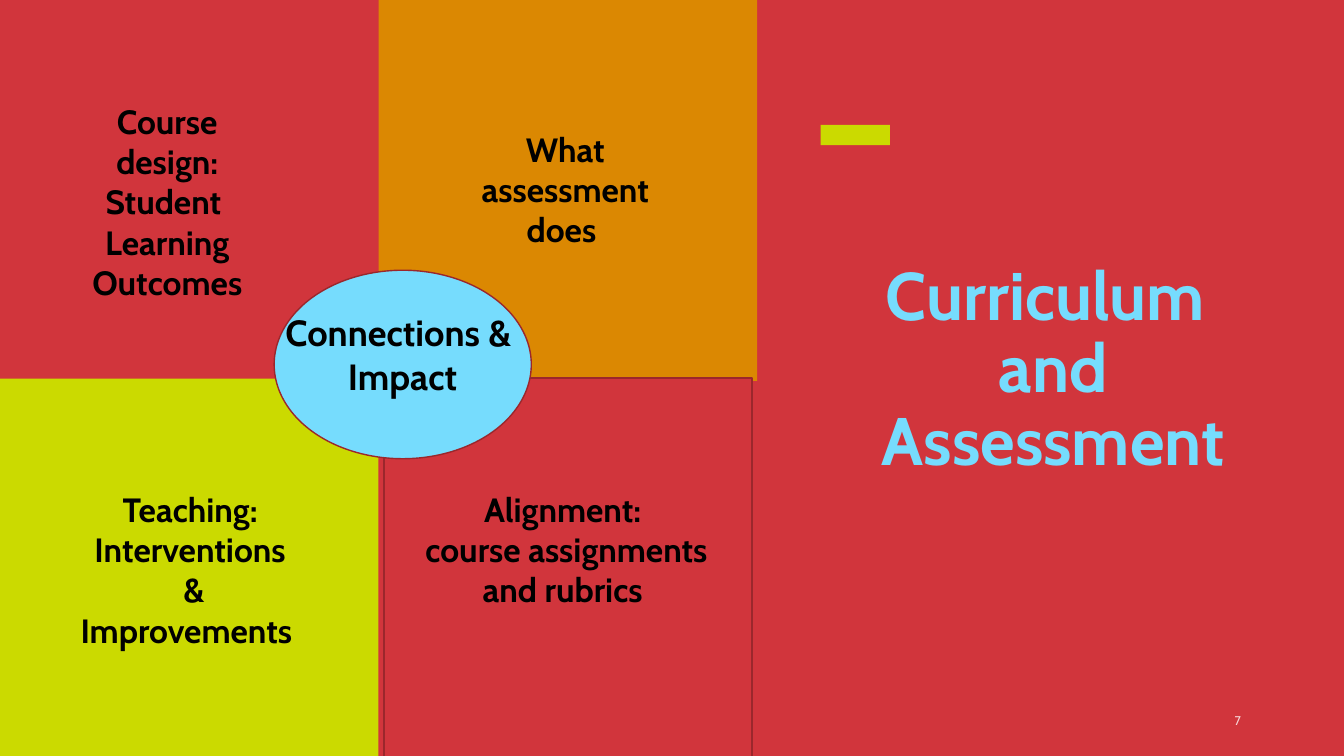
from pptx import Presentation
from pptx.dml.color import RGBColor
from pptx.enum.shapes import MSO_SHAPE as Shape
from pptx.enum.text import MSO_ANCHOR as Anchor, PP_ALIGN as Align
from pptx.util import Cm, Pt

FONT = "Cabin"
COLORS = {
    "red": "D1353C",
    "dark_red": "9B272C",
    "lime": "CBDA00",
    "orange": "DB8802",
    "sky": "76DCFD",
    "black": "000000",
    "pale": "F6D7D8",
}
SLIDE_WIDTH, SLIDE_HEIGHT = 33.87, 19.05
MATRIX_WIDTH = 19.08


def color(name):
    return RGBColor.from_string(COLORS[name])


def set_values(target, values):
    for name, value in values.items():
        setattr(target, name, value)


def place(box, offset):
    """Turn an offset (left, top, width, height) within a box into lengths."""
    left, top, width, height = offset
    return Cm(box[0] + left), Cm(box[1] + top), Cm(width), Cm(height)


def add_block(slide, box, offset, fill, line=None, kind=Shape.RECTANGLE):
    shape = slide.shapes.add_shape(kind, *place(box, offset))
    shape.shadow.inherit = False
    shape.fill.solid()
    shape.fill.fore_color.rgb = color(fill)
    if line:
        shape.line.color.rgb = color(line)
        shape.line.width = Pt(1)
    else:
        shape.line.fill.background()


def add_label(slide, box, offset, text, size=24, ink="black", bold=True,
              align=Align.CENTER, spacing=None, **frame_format):
    """Add a text box; each line of the text is a paragraph."""
    frame = slide.shapes.add_textbox(*place(box, offset)).text_frame
    set_values(frame, {"word_wrap": True, **frame_format})
    frame.text = text
    for paragraph in frame.paragraphs:
        set_values(paragraph, {"alignment": align, "line_spacing": spacing})
        for run in paragraph.runs:
            set_values(run.font, {"name": FONT, "size": Pt(size), "bold": bold})
            run.font.color.rgb = color(ink)


def add_matrix(slide, box):
    """Four quadrants with an oval over the middle."""
    half = box[2] / 2
    add_block(slide, box, (0, half, half, half), "lime")
    add_block(slide, box, (half, 0, half, 9.6), "orange")
    add_block(slide, box, (9.68, 9.53, 9.27, 9.53), "red", "dark_red")
    add_block(slide, box, (6.91, 6.81, 6.48, 4.75), "sky", "dark_red", Shape.OVAL)

    quadrant_labels = [
        ((1.55, 2.41, 5.33, 5.38), "Course design:\nStudent \nLearning Outcomes"),
        ((11.58, 3.12, 5.33, 3.33), "What assessment does "),
        ((1.55, 12.19, 6.48, 4.37), "Teaching: Interventions\n & Improvements "),
        ((10.06, 12.19, 8.43, 3.33),
         "Alignment: \ncourse assignments\nand rubrics "),
    ]
    for offset, text in quadrant_labels:
        add_label(slide, box, offset, text)
    add_label(slide, box, (6.68, 7.7, 6.93, 3.58), "Connections & \nImpact", size=26)


def add_title_panel(slide, box):
    add_block(slide, box, (1.6, 3.15, 1.75, 0.51), "lime")
    add_label(slide, box, (2.15, 6.48, 10.87, 5.74), "Curriculum \nand\nAssessment",
              size=48, ink="sky", spacing=0.9, margin_left=0)
    add_label(slide, box, (10.66, 17.65, 1.78, 1.02), "7", size=9, ink="pale",
              bold=False, align=Align.RIGHT, vertical_anchor=Anchor.MIDDLE)


def main():
    presentation = Presentation()
    set_values(presentation, {"slide_width": Cm(SLIDE_WIDTH),
                              "slide_height": Cm(SLIDE_HEIGHT)})
    slide = presentation.slides.add_slide(presentation.slide_layouts[6])
    slide.background.fill.solid()
    slide.background.fill.fore_color.rgb = color("red")
    add_matrix(slide, (0, 0, MATRIX_WIDTH, SLIDE_HEIGHT))
    add_title_panel(slide, (MATRIX_WIDTH, 0, SLIDE_WIDTH - MATRIX_WIDTH, SLIDE_HEIGHT))
    presentation.save("out.pptx")


if __name__ == "__main__":
    main()
